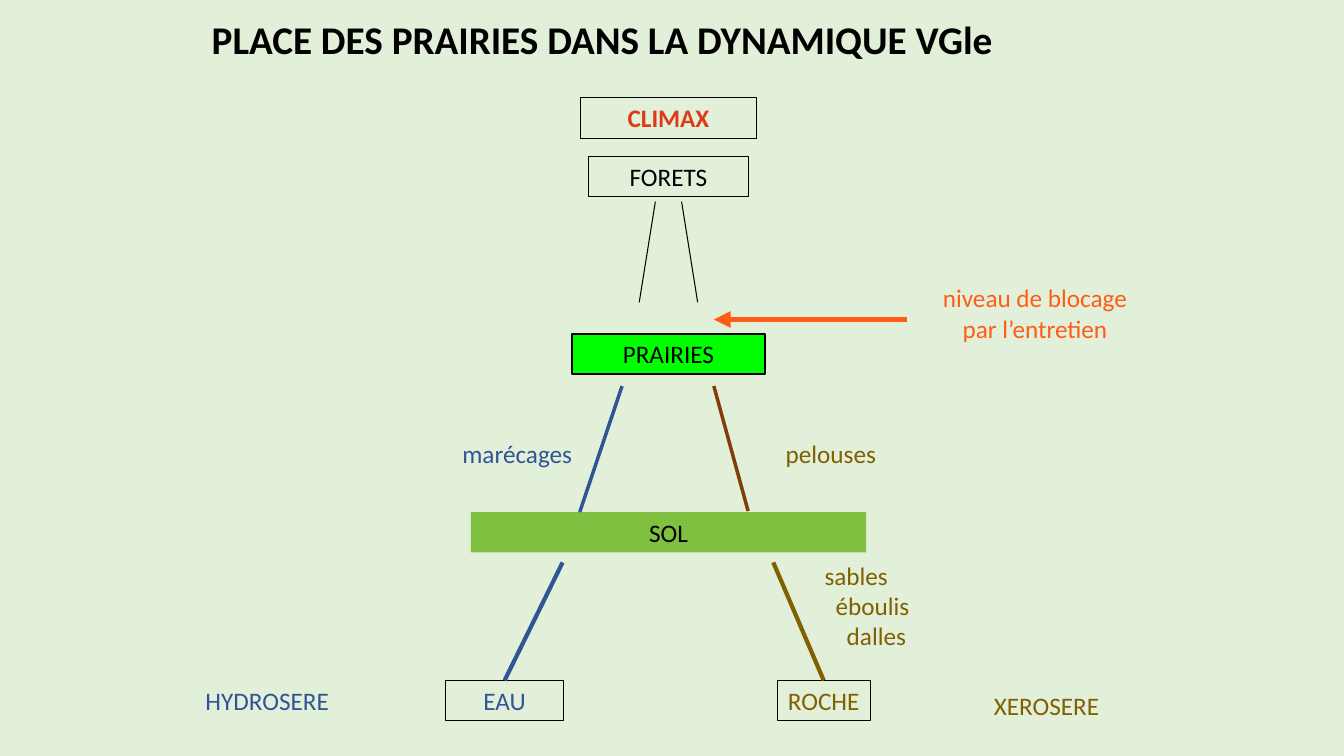
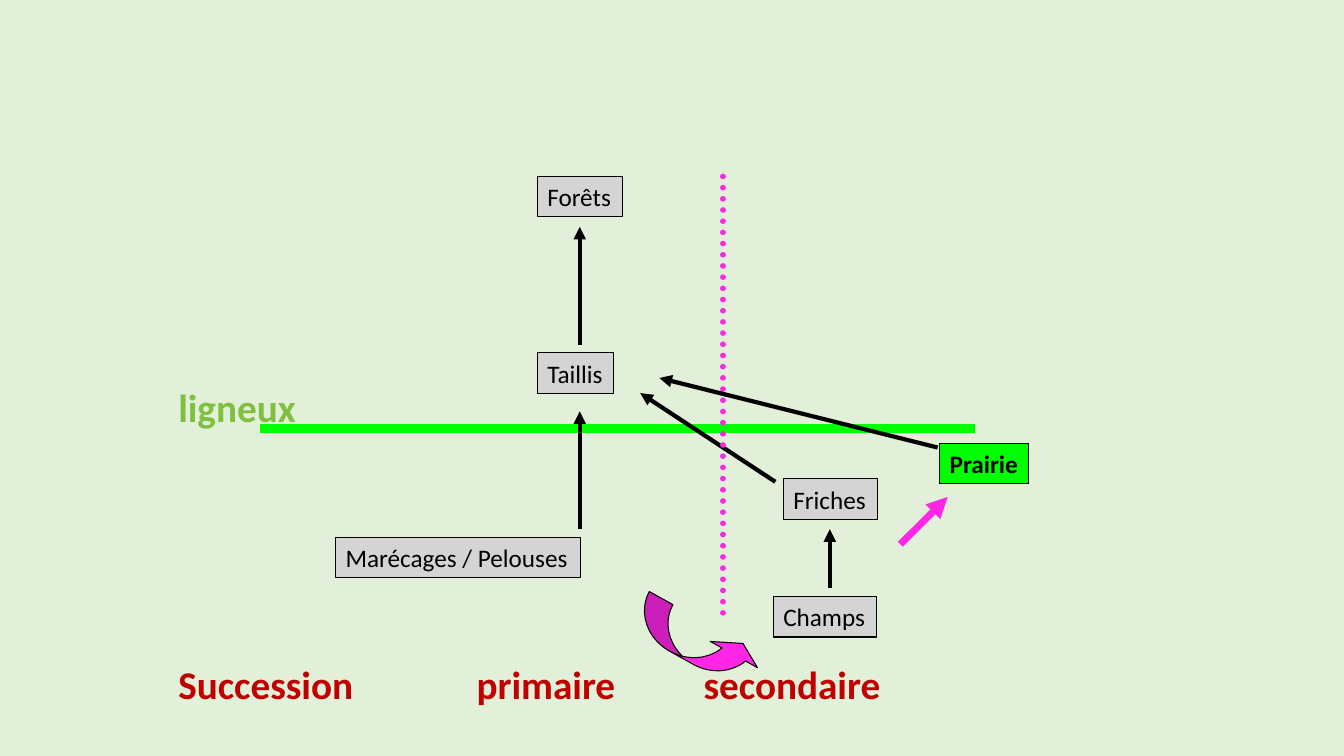
from lxml import etree
from pptx import Presentation
from pptx.dml.color import RGBColor
from pptx.enum import dml, shapes, text
from pptx.oxml.ns import qn
from pptx.util import Inches, Pt

COLOURS = {
    "background": "E2F0D9", "black": "000000", "climax": "DE3918",
    "water": "2F5597", "rock": "806000", "lawn": "843C0B",
    "soil": "80C040", "meadow": "00FF00", "blocking": "FF5C17",
    "stage": "D4D4D4", "heading": "C00000", "secondary": "FF26E6",
}
FONT = "Calibri"
BOX_HEIGHT = 0.4
AXIS = 6.63  # centre of the column of stages on the first slide
LEFT, CENTRE = text.PP_ALIGN.LEFT, text.PP_ALIGN.CENTER


def rgb(name):
    return RGBColor.from_string(COLOURS[name])


def write(frame, words, size=18, colour="black", bold=False, align=CENTRE):
    frame.text = words
    frame.vertical_anchor = text.MSO_ANCHOR.MIDDLE
    for para in frame.paragraphs:
        para.alignment = align
        para.font.name = FONT
        para.font.size = Pt(size)
        para.font.bold = bold
        para.font.color.rgb = rgb(colour)


def paint(shape, fill=None, border=None, weight=0.75):
    shape.shadow.inherit = False
    if fill:
        shape.fill.solid()
        shape.fill.fore_color.rgb = rgb(fill)
    else:
        shape.fill.background()
    if border:
        shape.line.color.rgb = rgb(border)
        shape.line.width = Pt(weight)
    else:
        shape.line.fill.background()


def add_box(page, words, left, top, width, fill=None, border="black",
            weight=0.75, wrap=True, **style):
    box = page.shapes.add_shape(
        shapes.MSO_SHAPE.RECTANGLE, Inches(left), Inches(top),
        Inches(width), Inches(BOX_HEIGHT))
    paint(box, fill, border, weight)
    box.text_frame.word_wrap = wrap
    write(box.text_frame, words, **style)
    return box


def add_label(page, words, left, top, width, height=BOX_HEIGHT, **style):
    label = page.shapes.add_textbox(
        Inches(left), Inches(top), Inches(width), Inches(height))
    label.text_frame.word_wrap = True
    write(label.text_frame, words, **style)
    return label


def add_line(page, start, end, colour="black", weight=3.0, arrow=False,
             dotted=False):
    line = page.shapes.add_connector(
        shapes.MSO_CONNECTOR.STRAIGHT, *map(Inches, start + end))
    line.line.color.rgb = rgb(colour)
    line.line.width = Pt(weight)
    outline = line.line._get_or_add_ln()
    if dotted:
        line.line.dash_style = dml.MSO_LINE.ROUND_DOT
        outline.set("cap", "rnd")
    if arrow:
        etree.SubElement(outline, qn("a:tailEnd"), type="triangle")
    etree.SubElement(line._element.spPr, qn("a:effectLst"))
    return line


def add_title(page, words):
    title = page.shapes.title
    title.left, title.top = Inches(2), Inches(0)
    title.width, title.height = Inches(9.67), Inches(0.83)
    write(title.text_frame, words, size=28, bold=True, align=LEFT)
    title.text_frame.paragraphs[0].line_spacing = 0.9


def build_dynamics(page):
    add_title(page, "PLACE DES PRAIRIES DANS LA DYNAMIQUE VGle")

    for words, top, width, look in (
            ("CLIMAX", 0.97, 1.75, {"colour": "climax", "bold": True}),
            ("FORETS", 1.55, 1.58, {}),
            ("PRAIRIES", 3.31, 1.92, {"fill": "meadow", "weight": 1.5}),
            ("SOL", 5.08, 3.92, {"fill": "soil", "border": None})):
        add_box(page, words, AXIS - width / 2, top, width, **look)
    water = add_box(page, "EAU", 4.42, 6.75, 1.17, colour="water")
    rock = add_box(page, "ROCHE", 7.71, 6.75, 0.92, colour="rock", wrap=False)

    for origin, start, end, colour in (
            (water, (5, 6.75), (5.58, 5.58), "water"),
            (rock, (8.17, 6.75), (7.67, 5.58), "rock")):
        add_line(page, start, end, colour).begin_connect(origin, 0)
    add_line(page, (5.75, 5.08), (6.17, 3.83), "water", 2.5)
    add_line(page, (7.42, 5.07), (7.08, 3.83), "lawn", 2.5)
    for side in (-1, 1):
        add_line(page, (AXIS + side * 0.29, 3), (AXIS + side * 0.13, 2),
                 weight=0.75)
    add_line(page, (9, 3.17), (7.08, 3.17), "blocking", 4, arrow=True)

    for words, left, top, width, colour in (
            ("marécages", 3.92, 4.3, 2.42, "water"),
            ("pelouses", 7.53, 4.3, 1.42, "rock"),
            ("HYDROSERE", 1.44, 6.75, 2.42, "water"),
            ("XEROSERE", 9.75, 6.8, 1.26, "rock")):
        add_label(page, words, left, top, width, colour=colour)
    add_label(page, "niveau de blocage\npar l’entretien", 9.14, 2.75, 2.25,
              0.71, colour="blocking")
    grounds = add_label(page, "sables\néboulis\ndalles", 8.08, 5.5, 1.2, 1.01,
                        colour="rock", align=LEFT)
    for step, para in enumerate(grounds.text_frame.paragraphs):
        para._p.get_or_add_pPr().set("marL", str(Inches(0.11 * step)))


def build_successions(page):
    add_line(page, (2.58, 4.25), (9.67, 4.25), "meadow", 6)

    for words, left, top, width in (
            ("Marécages / Pelouses", 3.33, 5.33, 2.43),
            ("Taillis", 5.33, 3.5, 0.76),
            ("Forêts", 5.33, 1.75, 0.84),
            ("Champs", 7.67, 5.92, 1.02),
            ("Friches", 7.77, 4.75, 0.93)):
        add_box(page, words, left, top, width, "stage", wrap=False, align=LEFT)
    add_box(page, "Prairie", 9.32, 4.4, 0.88, "meadow", wrap=False,
            bold=True, align=LEFT)

    for words, left, top, width, colour in (
            ("Succession", 1.67, 6.5, 2.1, "heading"),
            ("primaire", 4.63, 6.5, 1.8, "heading"),
            ("secondaire", 6.88, 6.5, 2.2, "heading"),
            ("ligneux", 1.67, 3.75, 1.5, "soil")):
        add_label(page, words, left, top, width, 0.57, size=28,
                  colour=colour, bold=True, align=LEFT)

    for start, end in (
            ((5.75, 5.25), (5.75, 4.08)),
            ((5.75, 3.42), (5.75, 2.25)),
            ((8.23, 5.83), (8.23, 5.25)),
            ((7.69, 4.78), (6.35, 3.9))):
        add_line(page, start, end, arrow=True)

    turn = page.shapes.add_shape(
        shapes.MSO_SHAPE.CURVED_RIGHT_ARROW, Inches(6.71), Inches(5.71),
        Inches(0.42), Inches(1.33))
    for index, value in enumerate((0.637, 1.275, 0.333)):
        turn.adjustments[index] = value
    turn.rotation = 299
    paint(turn, "secondary", "black")

    add_line(page, (8.93, 5.4), (9.4, 4.93), "secondary", 5, arrow=True)
    add_line(page, (7.17, 1.75), (7.17, 6.08), "secondary", 4, dotted=True)
    add_line(page, (9.3, 4.44), (6.54, 3.75), arrow=True)


def main():
    deck = Presentation()
    deck.slide_width, deck.slide_height = Inches(13.33), Inches(7.5)
    backdrop = deck.slide_master.background.fill
    backdrop.solid()
    backdrop.fore_color.rgb = rgb("background")
    title_only, blank = deck.slide_layouts[5], deck.slide_layouts[6]
    build_dynamics(deck.slides.add_slide(title_only))
    build_successions(deck.slides.add_slide(blank))
    deck.save("out.pptx")


if __name__ == "__main__":
    main()
